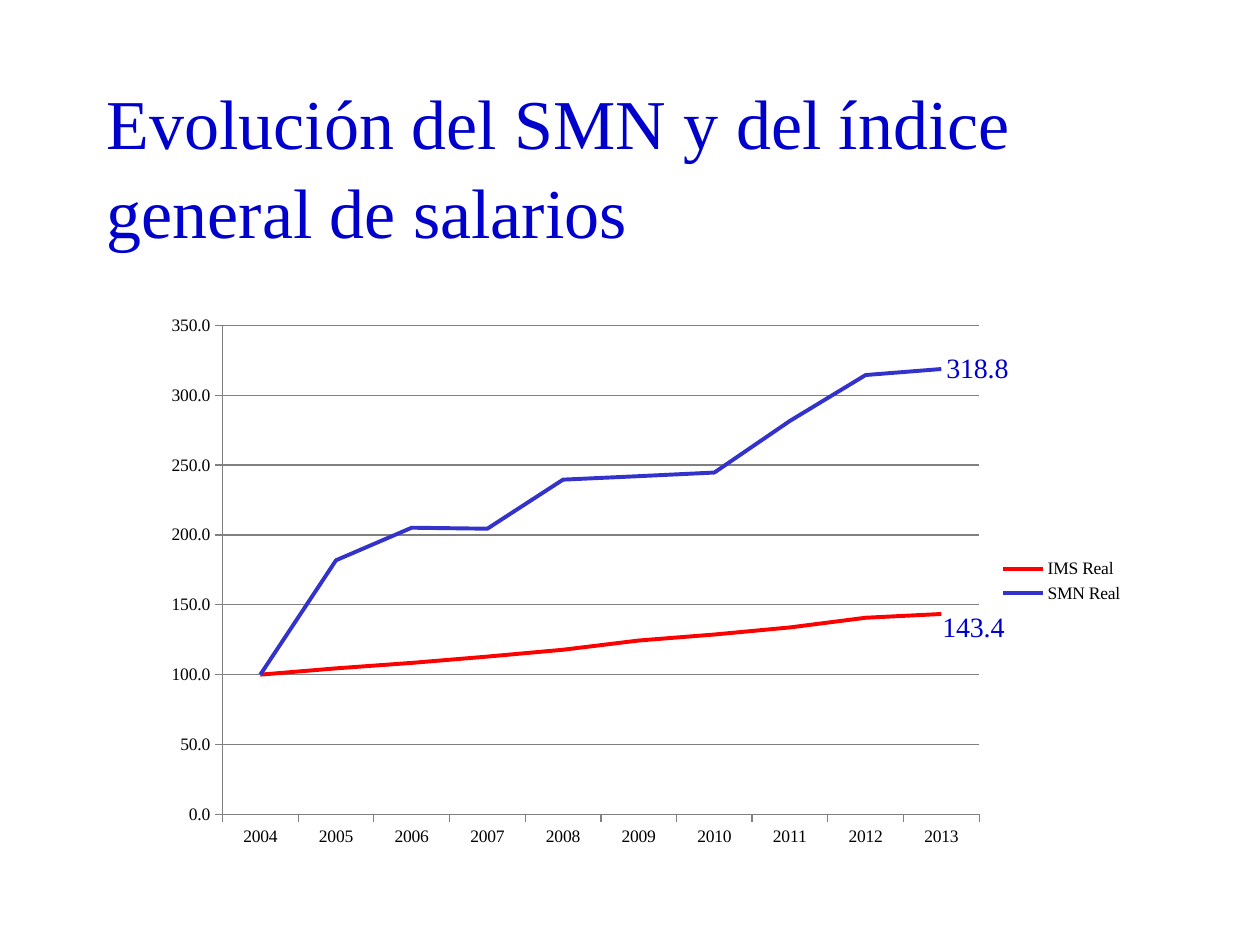
"""Build a slide with a line chart of the minimum wage and the general wage index."""
import pptx
import pptx.chart.data
import pptx.dml.color
import pptx.enum.chart
import pptx.enum.text
import pptx.oxml
import pptx.oxml.ns
import pptx.util

RGB = pptx.dml.color.RGBColor
BLACK = RGB(0, 0, 0)
BLUE = RGB(0, 0, 0xCC)
INDIGO = RGB(0x33, 0x33, 0xCC)
RED = RGB(0xFF, 0, 0)
GREY = RGB(0x80, 0x80, 0x80)
FACE = "Times New Roman"

TITLE = "Evolución del SMN y del índice general de salarios"
YEARS = [str(year) for year in range(2004, 2014)]
SERIES = [
    ("IMS Real", RED, (-0.004, 0.025),
     [100, 104.5, 108.4, 112.9, 117.8, 124.4, 128.7, 133.8, 140.7, 143.4]),
    ("SMN Real", INDIGO, None,
     [100, 181.9, 205.2, 204.5, 239.6, 242.1, 244.7, 281.7, 314.5, 318.8]),
]

WIDE, HIGH = 10, 7.5
TITLE_BOX = (0.075, 0.09, 0.85, 0.167)
CHART_BOX = (0.122, 0.321, 0.78, 0.588)
PLOT_BOX = (0.07, 0.04, 0.77, 0.88)


def place(box):
    return [pptx.util.Inches(part * size) for part, size in zip(box, (WIDE, HIGH) * 2)]


def put(thing, values):
    for name, value in values.items():
        setattr(thing, name, value)


def style(font, size, color):
    put(font, {"name": FACE, "size": pptx.util.Pt(size), "bold": False})
    font.color.rgb = color


def layout(values, inner=False):
    target = '<c:layoutTarget val="inner"/>' if inner else ""
    modes = '<c:xMode val="edge"/><c:yMode val="edge"/>' if inner else ""
    spots = "".join(f'<c:{key} val="{value}"/>' for key, value in zip("xywh", values))
    return pptx.oxml.parse_xml(
        f'<c:layout {pptx.oxml.ns.nsdecls("c")}><c:manualLayout>'
        f"{target}{modes}{spots}</c:manualLayout></c:layout>")


def add_title(slide):
    frame = slide.shapes.add_textbox(*place(TITLE_BOX)).text_frame
    put(frame, {"word_wrap": True, "text": TITLE,
                "vertical_anchor": pptx.enum.text.MSO_ANCHOR.MIDDLE})
    frame.paragraphs[0].line_spacing = 1.05
    style(frame.paragraphs[0].runs[0].font, 40, BLUE)


def add_chart(slide):
    kinds = pptx.enum.chart
    data = pptx.chart.data.CategoryChartData(number_format="0.0")
    data.categories = YEARS
    for name, _, _, values in SERIES:
        data.add_series(name, values)
    chart = slide.shapes.add_chart(
        kinds.XL_CHART_TYPE.LINE, *place(CHART_BOX), data).chart
    style(chart.font, 10, BLACK)
    put(chart, {"has_title": False, "has_legend": True})
    put(chart.legend, {"position": kinds.XL_LEGEND_POSITION.RIGHT,
                       "include_in_layout": False})
    chart.plots[0].vary_by_categories = False

    area = chart.plots[0]._element.getparent()
    for old in area.findall(pptx.oxml.ns.qn("c:layout")):
        area.remove(old)
    area.insert(0, layout(PLOT_BOX, inner=True))

    axes = chart.category_axis, chart.value_axis
    for axis in axes:
        put(axis, {"major_tick_mark": kinds.XL_TICK_MARK.OUTSIDE,
                   "minor_tick_mark": kinds.XL_TICK_MARK.NONE})
    put(chart.value_axis, {"minimum_scale": 0, "maximum_scale": 350,
                           "major_unit": 50, "has_major_gridlines": True})
    put(chart.value_axis.tick_labels, {"number_format": "0.0",
                                       "number_format_is_linked": False})
    for part in (*axes, chart.value_axis.major_gridlines):
        part.format.line.color.rgb = GREY
        part.format.line.width = pptx.util.Pt(0.75)

    for line, (_, color, shift, values) in zip(chart.plots[0].series, SERIES):
        line.smooth = False
        line.format.line.color.rgb = color
        line.format.line.width = pptx.util.Pt(2.25)
        line.marker.style = kinds.XL_MARKER_STYLE.NONE
        line.data_labels.show_value = False
        label = line.points[len(values) - 1].data_label
        style(label.font, 16, BLUE)
        label.position = kinds.XL_LABEL_POSITION.RIGHT
        if shift:
            mark = line._element.find(".//" + pptx.oxml.ns.qn("c:dLbl"))
            mark.insert(1, layout(shift))


def main():
    deck = pptx.Presentation()
    put(deck, {"slide_width": pptx.util.Inches(WIDE),
               "slide_height": pptx.util.Inches(HIGH)})
    slide = deck.slides.add_slide(deck.slide_layouts[6])
    add_title(slide)
    add_chart(slide)
    deck.save("out.pptx")


if __name__ == "__main__":
    main()
